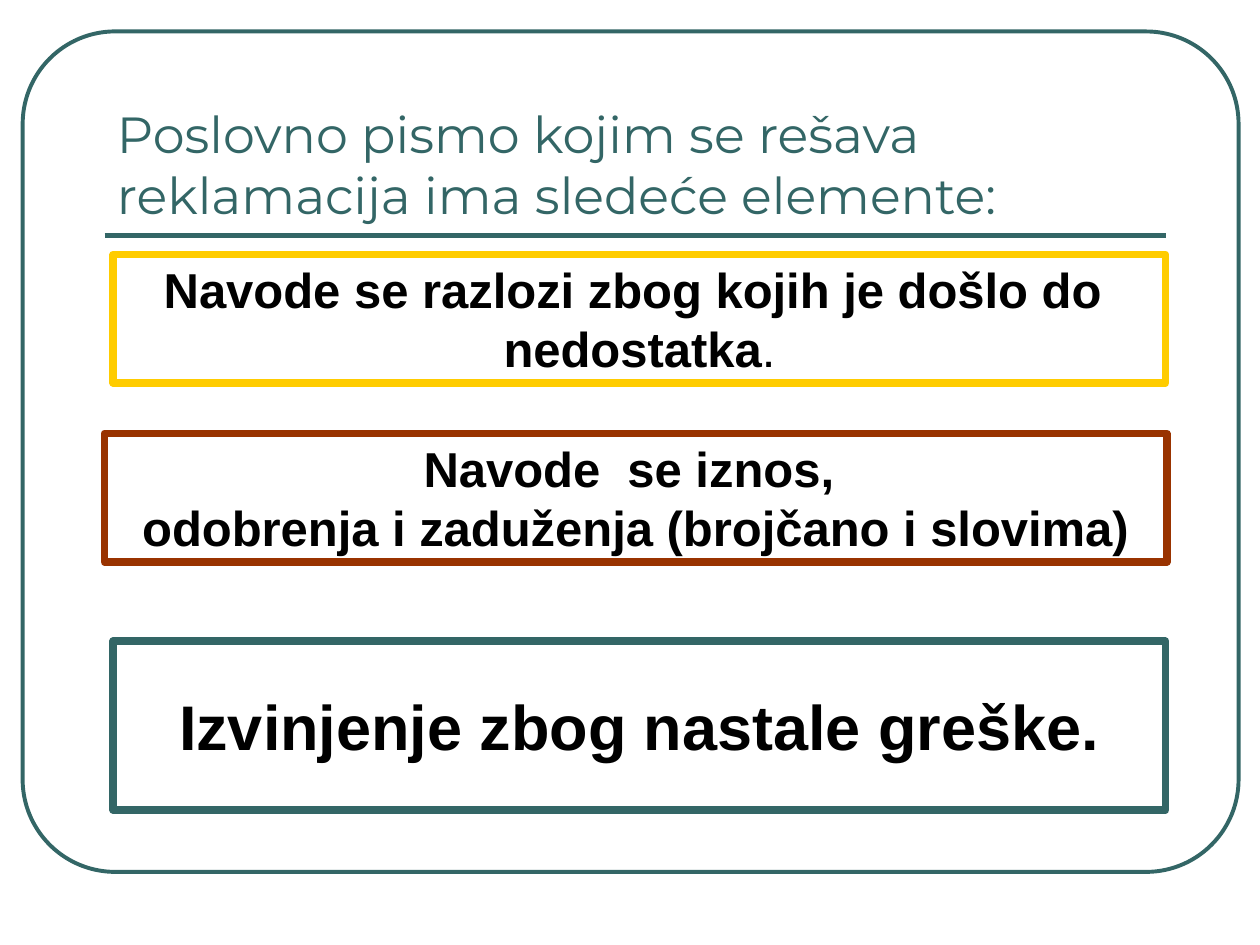
import pptx
import pptx.util
import pptx.dml.color
import pptx.enum.shapes
import pptx.enum.text
import pptx.oxml.ns
from lxml import etree
from pptx.util import Inches

COLORS = {
    "teal": "336666",
    "yellow": "FFCC00",
    "brown": "993300",
    "white": "FFFFFF",
    "black": "000000",
}
SHAPES = pptx.enum.shapes.MSO_SHAPE
ANCHOR = pptx.enum.text.MSO_ANCHOR
ALIGN = pptx.enum.text.PP_ALIGN


def color(name):
    return pptx.dml.color.RGBColor.from_string(COLORS[name])


def add_run(paragraph, text, size, font, color_name, bold=False):
    run = paragraph.add_run()
    run.text = text
    run.font.size = pptx.util.Pt(size)
    run.font.name = font
    run.font.bold = bold
    run.font.color.rgb = color(color_name)


def add_frame(slide):
    frame = slide.shapes.add_shape(
        SHAPES.ROUNDED_RECTANGLE,
        Inches(0.18), Inches(0.25), Inches(9.65), Inches(6.67))
    frame.adjustments[0] = 0.11
    frame.shadow.inherit = False
    frame.fill.background()
    frame.line.color.rgb = color("teal")
    frame.line.width = pptx.util.Pt(2.25)


def add_rule(slide):
    rule = slide.shapes.add_connector(
        pptx.enum.shapes.MSO_CONNECTOR.STRAIGHT,
        Inches(0.83), Inches(1.87), Inches(9.25), Inches(1.87))
    rule.line.color.rgb = color("teal")
    rule.line.width = pptx.util.Pt(3)
    properties = rule.element.spPr
    etree.SubElement(properties, pptx.oxml.ns.qn("a:effectLst"))


def add_title(slide, text):
    title = slide.shapes.add_textbox(
        Inches(0.83), Inches(0.58), Inches(8.42), Inches(1.25))
    title.text_frame.word_wrap = True
    title.text_frame.vertical_anchor = ANCHOR.BOTTOM
    add_run(title.text_frame.paragraphs[0], text, 29, "Montserrat", "teal")


def add_box(slide, left, top, width, height, border, size, lines):
    """Each line is a list of (text, bold) runs."""
    box = slide.shapes.add_shape(
        SHAPES.RECTANGLE,
        Inches(left), Inches(top), Inches(width), Inches(height))
    box.shadow.inherit = False
    box.fill.solid()
    box.fill.fore_color.rgb = color("white")
    box.line.color.rgb = color(border)
    box.line.width = pptx.util.Pt(4.5)
    text_frame = box.text_frame
    text_frame.word_wrap = False
    text_frame.vertical_anchor = ANCHOR.MIDDLE
    for index, runs in enumerate(lines):
        paragraph = text_frame.add_paragraph() if index else text_frame.paragraphs[0]
        paragraph.alignment = ALIGN.CENTER
        for text, bold in runs:
            add_run(paragraph, text, size, "Arial", "black", bold)


def main():
    presentation = pptx.Presentation()
    presentation.slide_width = Inches(10)
    presentation.slide_height = Inches(7.5)
    slide = presentation.slides.add_slide(presentation.slide_layouts[6])

    # Frame and heading
    add_frame(slide)
    add_rule(slide)
    add_title(slide, "Poslovno pismo kojim se rešava reklamacija ima sledeće elemente:")

    # Elements of the letter
    add_box(slide, 0.9, 2.02, 8.35, 1.02, "yellow", 28, [
        [("Navode se razlozi zbog kojih je došlo do ", True)],
        [("nedostatka", True), (".", False)],
    ])
    add_box(slide, 0.83, 3.44, 8.43, 1.02, "brown", 28, [
        [("Navode  se iznos, ", True)],
        [("odobrenja i zaduženja (brojčano i slovima)", True)],
    ])
    add_box(slide, 0.9, 5.09, 8.35, 1.34, "teal", 36, [
        [("Izvinjenje zbog nastale greške.", True)],
    ])

    presentation.save("out.pptx")


if __name__ == "__main__":
    main()
